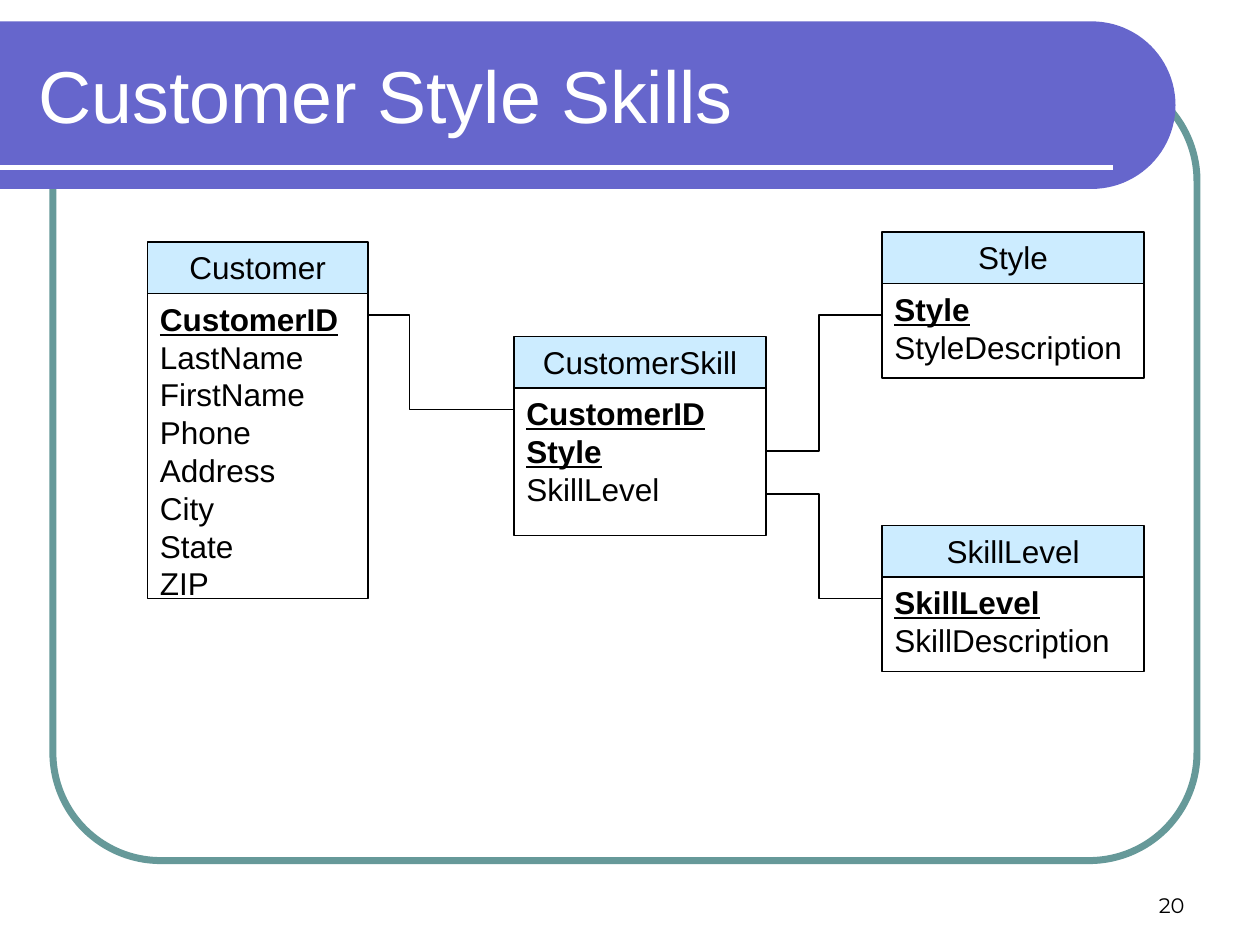
from math import cos, pi, sin

from pptx import Presentation
from pptx.dml.color import RGBColor
from pptx.enum.shapes import MSO_CONNECTOR, MSO_SHAPE
from pptx.enum.text import MSO_ANCHOR, PP_ALIGN
from pptx.oxml.ns import qn
from pptx.util import Inches, Pt

RECT, ROUNDED = MSO_SHAPE.RECTANGLE, MSO_SHAPE.ROUNDED_RECTANGLE
STRAIGHT = MSO_CONNECTOR.STRAIGHT
LEFT, CENTER, RIGHT = PP_ALIGN.LEFT, PP_ALIGN.CENTER, PP_ALIGN.RIGHT
TOP, MIDDLE, BOTTOM = MSO_ANCHOR.TOP, MSO_ANCHOR.MIDDLE, MSO_ANCHOR.BOTTOM

BLACK, WHITE = "000000", "FFFFFF"
BANNER, FRAME, HEADER = "6666CC", "669999", "CCECFF"
HEADER_H = 0.41

ENTITIES = [
    (1.17, 1.92, 1.75, 2.42, "Customer", ["CustomerID"],
     ["LastName", "FirstName", "Phone", "Address", "City", "State", "ZIP"]),
    (4.08, 2.67, 2, 1.17, "CustomerSkill", ["CustomerID", "Style"], ["SkillLevel"]),
    (7, 1.84, 2.08, 0.75, "Style", ["Style"], ["StyleDescription"]),
    (7, 4.17, 2.08, 0.75, "SkillLevel", ["SkillLevel"], ["SkillDescription"]),
]
RELATIONS = [
    (2.92, 2.5, 3.25, 4.08, 3.25),
    (6.08, 3.58, 6.5, 7, 2.5),
    (6.08, 3.92, 6.5, 7, 4.75),
]


def color(value):
    return RGBColor.from_string(value)


def paint(sp, fill=None, line=None, width=0.75):
    sp.shadow.inherit = False
    if fill:
        sp.fill.solid()
        sp.fill.fore_color.rgb = color(fill)
    else:
        sp.fill.background()
    if line:
        sp.line.color.rgb = color(line)
        sp.line.width = Pt(width)
    else:
        sp.line.fill.background()


def add_box(s, kind, x, y, w, h, fill=None, line=BLACK, width=0.75):
    sp = s.shapes.add_shape(kind, Inches(x), Inches(y), Inches(w), Inches(h))
    paint(sp, fill, line, width)
    return sp


def add_path(s, points, closed=False, fill=None, line=None):
    pts = [(Inches(x), Inches(y)) for x, y in points]
    builder = s.shapes.build_freeform(*pts[0])
    builder.add_line_segments(pts[1:], close=closed)
    paint(builder.convert_to_shape(), fill, line)


def add_line(s, x1, y1, x2, y2, line, width):
    c = s.shapes.add_connector(STRAIGHT, Inches(x1), Inches(y1), Inches(x2), Inches(y2))
    c.line.color.rgb = color(line)
    c.line.width = Pt(width)
    sp_pr = c._element.spPr
    sp_pr.append(sp_pr.makeelement(qn("a:effectLst"), {}))


def write(sp, lines, size=18, font="Arial", ink=BLACK, align=LEFT, anchor=TOP, keys=()):
    tf = sp.text_frame
    tf.word_wrap = True
    tf.vertical_anchor = anchor
    for i, text in enumerate(lines):
        p = tf.add_paragraph() if i else tf.paragraphs[0]
        p.alignment = align
        r = p.add_run()
        r.text = text
        r.font.size = Pt(size)
        r.font.name = font
        r.font.color.rgb = color(ink)
        r.font.bold = r.font.underline = text in keys


def add_text(s, x, y, w, h, text, **style):
    sp = s.shapes.add_textbox(Inches(x), Inches(y), Inches(w), Inches(h))
    write(sp, [text], **style)


def add_banner(s, top, bottom, right):
    radius = (bottom - top) / 2
    steps = 48
    angles = [pi * i / steps - pi / 2 for i in range(steps + 1)]
    cap = [(right - radius + radius * cos(a), top + radius + radius * sin(a)) for a in angles]
    add_path(s, [(0, top), *cap, (0, bottom)], closed=True, fill=BANNER)


def add_entity(s, x, y, w, body_h, name, keys, fields):
    write(add_box(s, RECT, x, y, w, HEADER_H, HEADER), [name], align=CENTER)
    write(add_box(s, RECT, x, y + HEADER_H, w, body_h), keys + fields, keys=keys)


def add_relation(s, x1, y1, bend, x2, y2):
    add_path(s, [(x1, y1), (bend, y1), (bend, y2), (x2, y2)], line=BLACK)


def main():
    prs = Presentation()
    prs.slide_width, prs.slide_height = Inches(10), Inches(7.5)
    s = prs.slides.add_slide(prs.slide_layouts[6])

    frame = add_box(s, ROUNDED, 0.42, 0.58, 9.08, 6.25, line=FRAME, width=4)
    frame.adjustments[0] = 0.137
    add_banner(s, 0.17, 1.5, 9.33)
    add_line(s, 0, 1.33, 8.83, 1.33, WHITE, 3)
    add_text(s, 7.17, 6.83, 2.33, 0.5, "20", size=12, font="Montserrat",
             align=RIGHT, anchor=BOTTOM)
    add_text(s, 0.21, 0.25, 8.77, 1, "Customer Style Skills", size=42, ink=WHITE,
             anchor=MIDDLE)

    for entity in ENTITIES:
        add_entity(s, *entity)
    for relation in RELATIONS:
        add_relation(s, *relation)

    prs.save("out.pptx")


if __name__ == "__main__":
    main()
